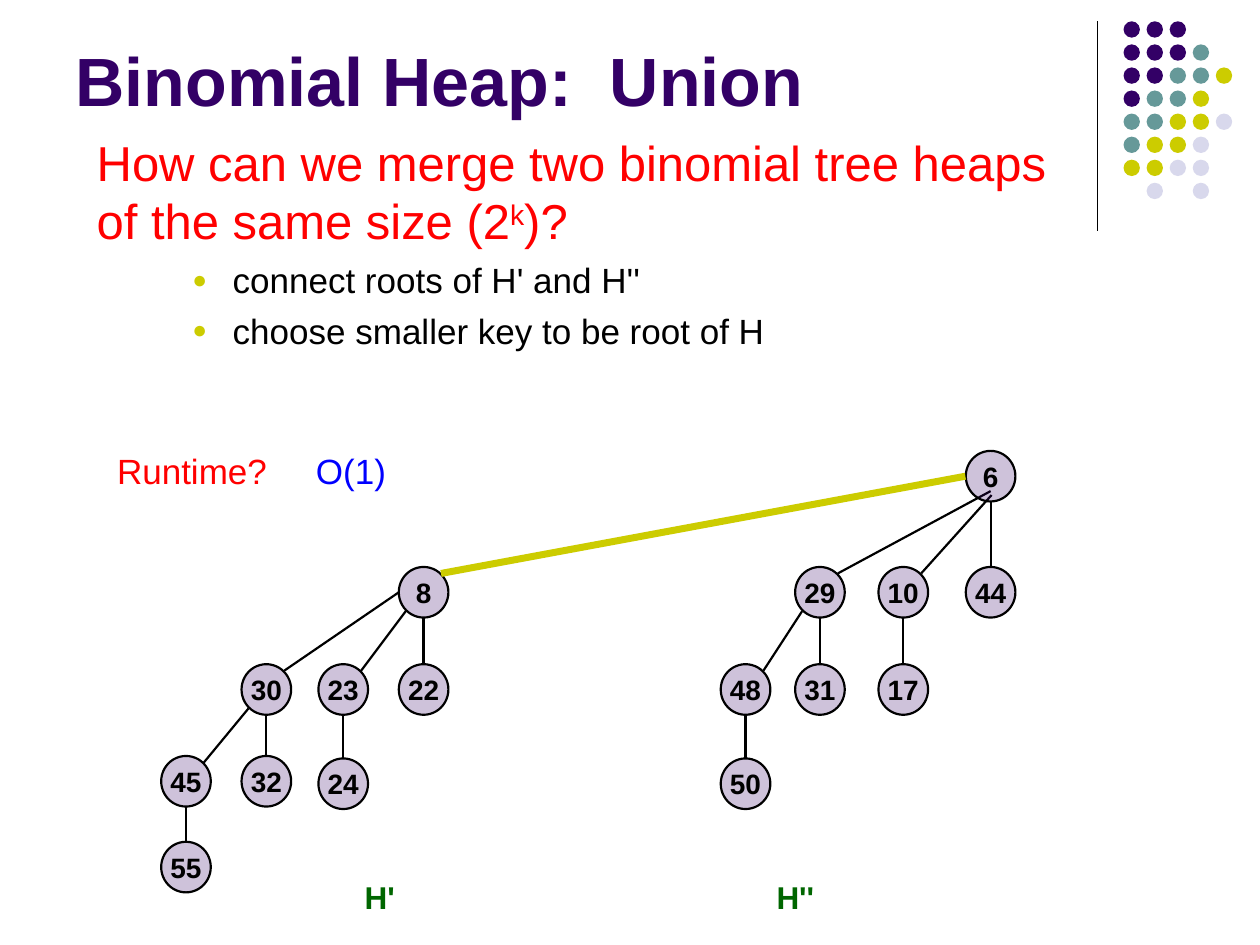
from lxml.etree import SubElement
from pptx import Presentation
from pptx.dml.color import RGBColor
from pptx.enum.shapes import MSO_CONNECTOR, MSO_SHAPE
from pptx.enum.text import MSO_ANCHOR, MSO_AUTO_SIZE, PP_ALIGN
from pptx.oxml.ns import qn
from pptx.util import Cm, Pt

PURPLE, TEAL, LIME, LAVENDER = "330066", "669999", "CCCC00", "D8D8EC"
BLACK, RED, BLUE, GREEN = "000000", "FF0000", "0000FF", "006600"
DOT_ROWS = ["PPP", "PPPT", "PPTTL", "PTTL", "TTLLV", "TLLV", "LLVV", " V V"]
DOT_COLORS = {"P": PURPLE, "T": TEAL, "L": LIME, "V": LAVENDER}
NODE_WIDTH, NODE_HEIGHT = 1.0, 1.02
LOWER_LEFT = (-0.36, 0.38)

LEFT_NODES = {
    "8": (5.29, 0.51), "30": (2.12, 2.47), "23": (3.67, 2.47), "22": (5.29, 2.47),
    "45": (0.5, 4.32), "32": (2.12, 4.32), "24": (3.67, 4.37), "55": (0.5, 6.05),
}
LEFT_EDGES = [
    ("55", "45"), ("32", "30"), ("45", "30"), ("24", "23"), ("22", "8"),
    ("23", "8"), ("30", "8", (-0.5, 0)),
]
RIGHT_NODES = {
    "6": (5.44, 0.51), "29": (2.0, 2.85), "10": (3.68, 2.85), "44": (5.44, 2.85),
    "48": (0.5, 4.81), "31": (2.0, 4.81), "17": (3.68, 4.81), "50": (0.5, 6.71),
}
RIGHT_EDGES = [
    ("50", "48"), ("31", "29"), ("48", "29"), ("17", "10"), ("44", "6"),
    ("29", "6", (0, 0.3)), ("10", "6", (0.02, 0.38)),
]


def rgb(color):
    """Turn a hex string into a colour."""
    return RGBColor.from_string(color)


def write(paragraph, text, size=20, color=BLACK, bold=False, align=PP_ALIGN.LEFT,
          before=0, superscript=False):
    """Append a formatted run to a paragraph."""
    paragraph.alignment = align
    paragraph.space_before = Pt(before)
    run = paragraph.add_run()
    run.text = text
    run.font.name = "Arial"
    run.font.size = Pt(size)
    run.font.bold = bold
    run.font.color.rgb = rgb(color)
    if superscript:
        run.font._element.set("baseline", "30000")


def add_bullet(paragraph):
    """Give a paragraph a hanging lime bullet."""
    properties = paragraph._p.get_or_add_pPr()
    properties.set("marL", str(Cm(2.74)))
    properties.set("indent", str(Cm(-0.81)))
    color = SubElement(properties, qn("a:buClr"))
    SubElement(color, qn("a:srgbClr"), val=LIME)
    SubElement(properties, qn("a:buSzPct"), val="70000")
    SubElement(properties, qn("a:buFont"), typeface="Arial")
    SubElement(properties, qn("a:buChar"), char="●")


def add_text_box(slide, left, top, width, height):
    """Add a wrapping text box and return its text frame."""
    box = slide.shapes.add_textbox(Cm(left), Cm(top), Cm(width), Cm(height))
    box.text_frame.word_wrap = True
    return box.text_frame


def add_line(slide, start, end, color=BLACK, width=1.25):
    """Add a straight connector without a shadow."""
    line = slide.shapes.add_connector(
        MSO_CONNECTOR.STRAIGHT, *(Cm(value) for value in (*start, *end)))
    line.line.color.rgb = rgb(color)
    line.line.width = Pt(width)
    SubElement(line._element.spPr, qn("a:effectLst"))


def add_ellipse(slide, left, top, width, height, color):
    """Add a filled ellipse without outline or shadow."""
    shape = slide.shapes.add_shape(
        MSO_SHAPE.OVAL, Cm(left), Cm(top), Cm(width), Cm(height))
    shape.shadow.inherit = False
    shape.fill.solid()
    shape.fill.fore_color.rgb = rgb(color)
    shape.line.fill.background()
    return shape


def add_node(slide, x, y, key):
    """Add a translucent heap node centred on a point."""
    node = add_ellipse(slide, x - NODE_WIDTH / 2, y - NODE_HEIGHT / 2,
                       NODE_WIDTH, NODE_HEIGHT, PURPLE)
    SubElement(node._element.spPr.find(".//" + qn("a:srgbClr")),
               qn("a:alpha"), val="24000")
    node.line.color.rgb = rgb(BLACK)
    node.line.width = Pt(1.25)
    node.text_frame.word_wrap = False
    node.text_frame.vertical_anchor = MSO_ANCHOR.MIDDLE
    write(node.text_frame.paragraphs[0], key, size=16, bold=True, align=PP_ALIGN.CENTER)


def add_edge(slide, child, parent, end=LOWER_LEFT):
    """Join a child node to its parent, vertically when they are aligned."""
    (child_x, child_y), (parent_x, parent_y) = child, parent
    start = (0.36, -0.38)
    if child_x == parent_x:
        start, end = (0, -NODE_HEIGHT / 2), (0, NODE_HEIGHT / 2)
    add_line(slide, (child_x + start[0], child_y + start[1]),
             (parent_x + end[0], parent_y + end[1]))


def add_tree(slide, left, top, nodes, edges):
    """Draw a binomial tree inside a box with the given corner."""
    centers = {key: (left + x, top + y) for key, (x, y) in nodes.items()}
    for child, parent, *end in edges:
        add_edge(slide, centers[child], centers[parent], *end)
    for key, (x, y) in centers.items():
        add_node(slide, x, y, key)


def add_decoration(slide, left, top):
    """Draw the corner rule and its dot pattern."""
    add_line(slide, (left, top), (left, top + 4.22), width=0.75)
    for row, letters in enumerate(DOT_ROWS):
        for column, letter in enumerate(letters):
            if letter in DOT_COLORS:
                add_ellipse(slide, left + 0.53 + column * 0.465, top + row * 0.465,
                            0.33, 0.33, DOT_COLORS[letter])


def add_title(slide, left, top, width, height):
    """Place and format the title placeholder."""
    title = slide.shapes.title
    title.left, title.top, title.width, title.height = map(Cm, (left, top, width, height))
    title.text_frame.auto_size = MSO_AUTO_SIZE.NONE
    title.text_frame.vertical_anchor = MSO_ANCHOR.BOTTOM
    write(title.text_frame.paragraphs[0], "Binomial Heap:  Union",
          size=39, color=PURPLE, bold=True)


def add_body(slide, left, top, width, height):
    """Write the question and its two bullet answers."""
    frame = add_text_box(slide, left, top, width, height)
    question = frame.paragraphs[0]
    for text, raised in (
            ("How can we merge two binomial tree heaps of the same size (2", False),
            ("k", True), (")?", False)):
        write(question, text, size=28, color=RED, before=5, superscript=raised)
    for text in ("connect roots of H' and H''", "choose smaller key to be root of H"):
        paragraph = frame.add_paragraph()
        write(paragraph, text, before=5)
        add_bullet(paragraph)


def add_label(slide, left, top, width, text, **style):
    """Add a one-line label."""
    frame = add_text_box(slide, left, top, width, 1.1)
    write(frame.paragraphs[0], text, **style)


def main():
    """Build the slide and save it."""
    presentation = Presentation()
    presentation.slide_width, presentation.slide_height = Cm(25.4), Cm(19.05)
    slide = presentation.slides.add_slide(presentation.slide_layouts[5])
    add_decoration(slide, 22.12, 0.43)
    add_title(slide, 1.27, 0.33, 20.96, 2.21)
    add_body(slide, 1.7, 2.54, 20.32, 4.01)
    add_tree(slide, 3.25, 11.43, LEFT_NODES, LEFT_EDGES)
    add_tree(slide, 14.53, 9.09, RIGHT_NODES, RIGHT_EDGES)
    add_line(slide, (19.46, 9.6), (8.89, 11.56), color=LIME, width=4)
    for left, text in ((6.78, "H'"), (15.16, "H''")):
        add_label(slide, left, 17.58, 1.75, text, size=18, color=GREEN,
                  bold=True, align=PP_ALIGN.CENTER)
    for left, text, color in ((2.11, "Runtime?", RED), (6.12, "O(1)", BLUE)):
        add_label(slide, left, 8.94, 3.61, text, color=color)
    presentation.save("out.pptx")


if __name__ == "__main__":
    main()
